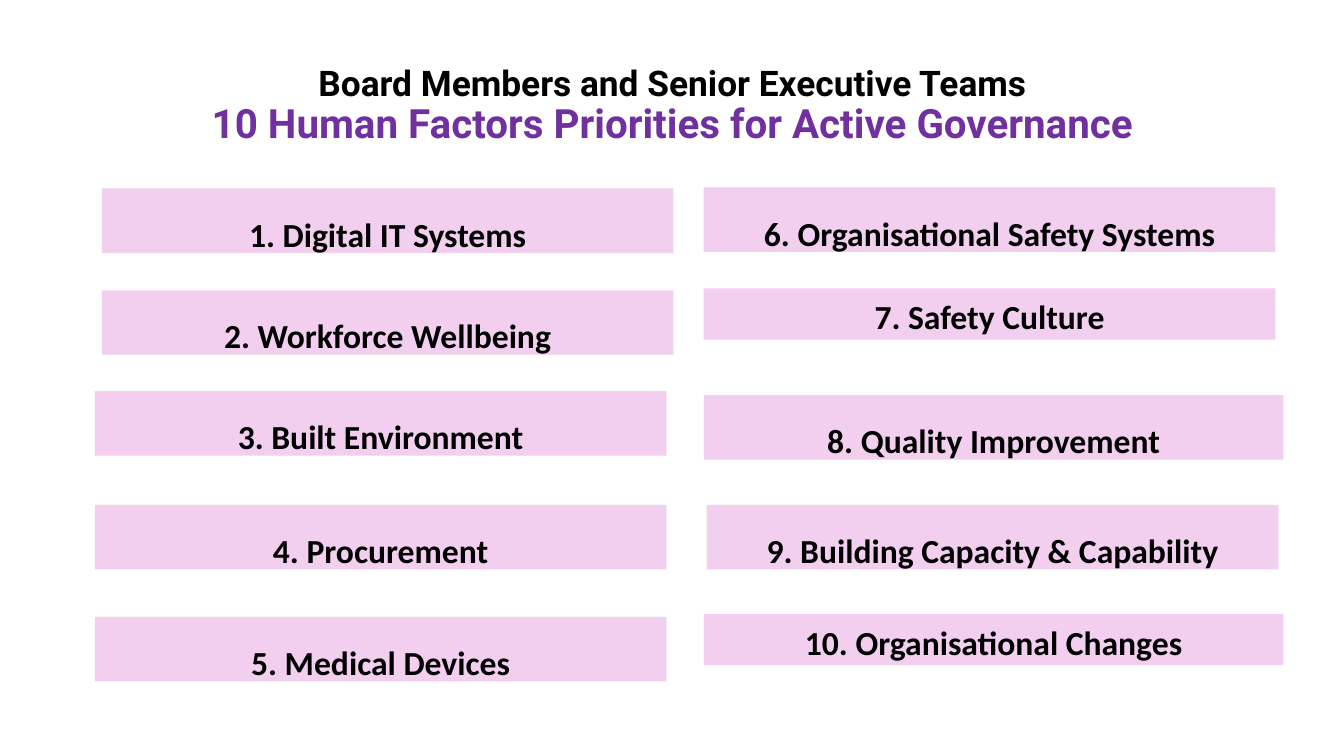
from dataclasses import dataclass

from pptx import Presentation
from pptx import util as u
from pptx.dml.color import RGBColor
from pptx.enum import shapes, text
from pptx.shapes.autoshape import Shape
from pptx.slide import Slide
from pptx.text.text import TextFrame


@dataclass(frozen=True)
class Theme:
    ink: RGBColor = RGBColor(0x00, 0x00, 0x00)
    purple: RGBColor = RGBColor(0x70, 0x30, 0xA0)
    pink: RGBColor = RGBColor(0xF2, 0xCF, 0xEE)
    heading_font: str = "Roboto"
    body_font: str = "Calibri"
    audience_size: float = 25.2
    heading_size: float = 28.8
    priority_size: float = 24


@dataclass(frozen=True)
class Line:
    words: str
    size: float
    color: RGBColor


@dataclass(frozen=True)
class Priority:
    name: str
    left: float
    top: float
    width: float = 5.67
    height: float = 0.64
    spacing: float = 1.5


THEME = Theme()
COMPACT = {"height": 0.51, "spacing": 1.07}

HEADING = [
    Line("Board Members and Senior Executive Teams", THEME.audience_size, THEME.ink),
    Line("10 Human Factors Priorities for Active Governance",
         THEME.heading_size, THEME.purple),
]

PRIORITIES = [
    Priority("Digital IT Systems", 1.01, 1.87),
    Priority("Workforce Wellbeing", 1.01, 2.88),
    Priority("Built Environment", 0.94, 3.88),
    Priority("Procurement", 0.94, 5.01),
    Priority("Medical Devices", 0.94, 6.12),
    Priority("Organisational Safety Systems", 6.98, 1.86),
    Priority("Safety Culture", 6.98, 2.86, **COMPACT),
    Priority("Quality Improvement", 6.98, 3.92, width=5.75),
    Priority("Building Capacity & Capability", 7.01, 5.01),
    Priority("Organisational Changes", 6.98, 6.09, width=5.75, **COMPACT),
]


def write_text(frame: TextFrame, lines: list[Line], *, font: str, spacing: float,
               anchor: text.MSO_ANCHOR, fit: text.MSO_AUTO_SIZE,
               after: float = 0) -> None:
    frame.word_wrap = True
    frame.auto_size = fit
    frame.vertical_anchor = anchor
    paragraph = frame.paragraphs[0]
    paragraph.alignment = text.PP_ALIGN.CENTER
    paragraph.line_spacing = spacing
    paragraph.space_after = u.Pt(after)
    for index, line in enumerate(lines):
        if index:
            paragraph.add_line_break()
        run = paragraph.add_run()
        run.text = line.words
        run.font.name = font
        run.font.size = u.Pt(line.size)
        run.font.bold = True
        run.font.color.rgb = line.color


def draw_heading(slide: Slide) -> None:
    heading = slide.shapes.add_textbox(
        u.Inches(0.92), u.Inches(0.76), u.Inches(11.5), u.Inches(0.6))
    write_text(heading.text_frame, HEADING, font=THEME.heading_font, spacing=0.9,
               anchor=text.MSO_ANCHOR.MIDDLE, fit=text.MSO_AUTO_SIZE.NONE)


def draw_priority(slide: Slide, number: int, priority: Priority) -> Shape:
    bar = slide.shapes.add_shape(
        shapes.MSO_SHAPE.RECTANGLE, u.Inches(priority.left), u.Inches(priority.top),
        u.Inches(priority.width), u.Inches(priority.height))
    bar.shadow.inherit = False
    bar.fill.solid()
    bar.fill.fore_color.rgb = THEME.pink
    bar.line.fill.background()
    label = Line(f"{number}. {priority.name}", THEME.priority_size, THEME.ink)
    write_text(bar.text_frame, [label], font=THEME.body_font,
               spacing=priority.spacing, after=8, anchor=text.MSO_ANCHOR.TOP,
               fit=text.MSO_AUTO_SIZE.SHAPE_TO_FIT_TEXT)
    return bar


def main() -> None:
    deck = Presentation()
    deck.slide_width = u.Inches(13.33)
    deck.slide_height = u.Inches(7.5)
    slide = deck.slides.add_slide(deck.slide_layouts[6])
    draw_heading(slide)
    for number, priority in enumerate(PRIORITIES, start=1):
        draw_priority(slide, number, priority)
    deck.save("out.pptx")


if __name__ == "__main__":
    main()
